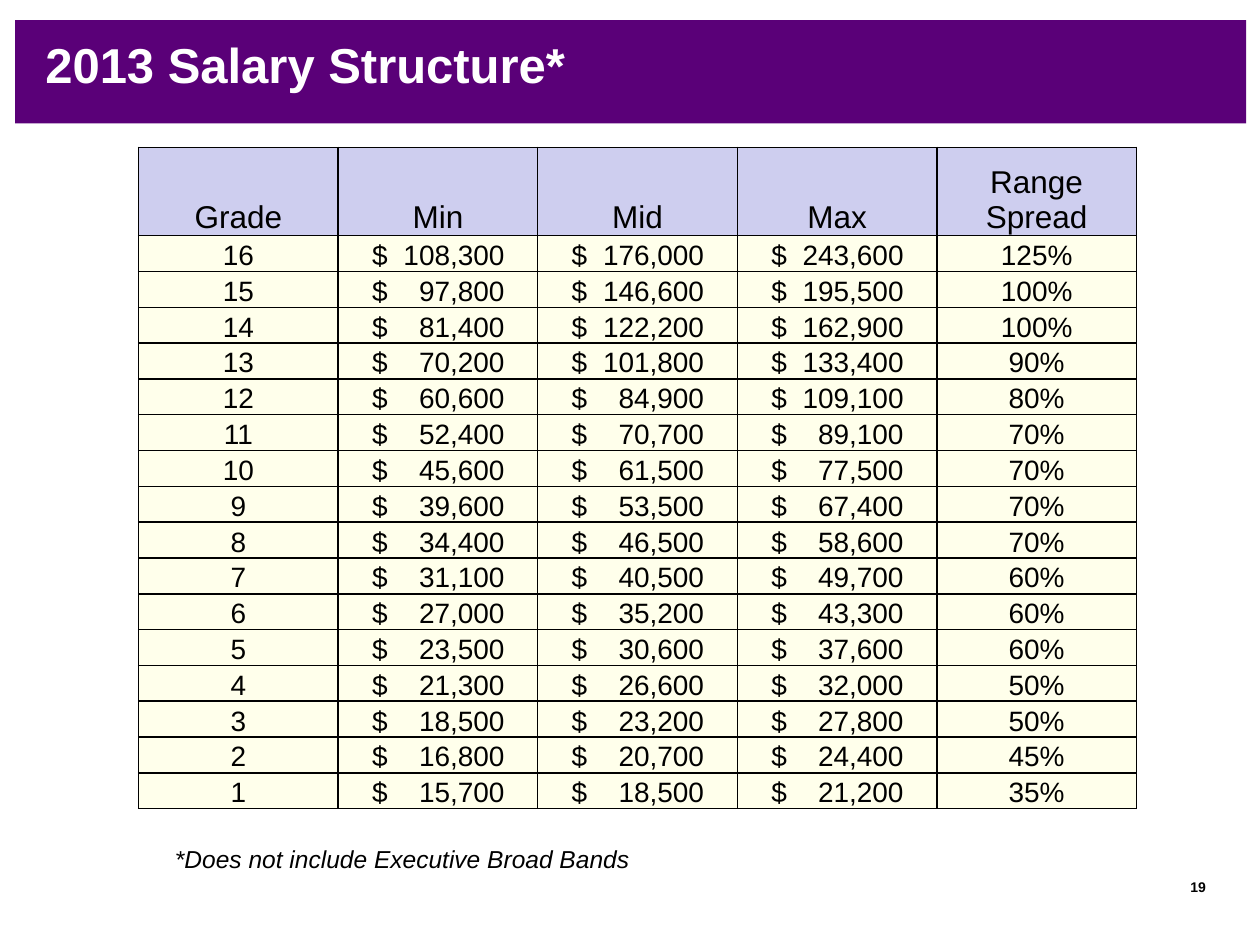
"""Build the 2013 salary structure slide with its grade table."""
from lxml.etree import SubElement
from pptx import Presentation
from pptx.dml.color import RGBColor
from pptx.enum.shapes import MSO_SHAPE
from pptx.enum.text import MSO_ANCHOR, MSO_AUTO_SIZE, PP_ALIGN
from pptx.oxml.ns import qn
from pptx.util import Inches, Pt

COLORS = {"band": "5A0078", "header": "CECEEF", "body": "FFFFEB", "ink": "000000", "white": "FFFFFF"}
HEADERS = ["Grade", "Min", "Mid", "Max", "Range Spread"]
SALARIES = [
    (16, 108300, 176000, 243600, 125),
    (15, 97800, 146600, 195500, 100),
    (14, 81400, 122200, 162900, 100),
    (13, 70200, 101800, 133400, 90),
    (12, 60600, 84900, 109100, 80),
    (11, 52400, 70700, 89100, 70),
    (10, 45600, 61500, 77500, 70),
    (9, 39600, 53500, 67400, 70),
    (8, 34400, 46500, 58600, 70),
    (7, 31100, 40500, 49700, 60),
    (6, 27000, 35200, 43300, 60),
    (5, 23500, 30600, 37600, 60),
    (4, 21300, 26600, 32000, 50),
    (3, 18500, 23200, 27800, 50),
    (2, 16800, 20700, 24400, 45),
    (1, 15700, 18500, 21200, 35),
]


def write(frame, text, size, color="ink", align=PP_ALIGN.LEFT, tab=None, **styles):
    para = frame.paragraphs[0]
    para.alignment = align
    if tab:
        tabs = SubElement(para._p.get_or_add_pPr(), qn("a:tabLst"))
        SubElement(tabs, qn("a:tab"), pos=str(tab), algn="r")
    span = para.add_run()
    span.text = text
    formats = {"name": "Arial", "size": Pt(size), "bold": False, "italic": False, **styles}
    for name, value in formats.items():
        setattr(span.font, name, value)
    span.font.color.rgb = RGBColor.from_string(COLORS[color])


def style_cell(cell, color):
    properties = cell._tc.get_or_add_tcPr()
    for side in ("lnL", "lnR", "lnT", "lnB"):
        line = SubElement(properties, qn(f"a:{side}"), w=str(Pt(1)))
        fill = SubElement(line, qn("a:solidFill"))
        SubElement(fill, qn("a:srgbClr"), val=COLORS["ink"])
    cell.fill.solid()
    cell.fill.fore_color.rgb = RGBColor.from_string(COLORS[color])
    for side in ("left", "right", "top", "bottom"):
        setattr(cell, f"margin_{side}", 0)
    cell.vertical_anchor = MSO_ANCHOR.BOTTOM


deck = Presentation()
deck.slide_width, deck.slide_height = Inches(10), Inches(7.5)
page = deck.slides.add_slide(deck.slide_layouts[5])

band = page.shapes.add_shape(MSO_SHAPE.RECTANGLE, Inches(0.12), Inches(0.16), Inches(9.77), Inches(0.82))
band.shadow.inherit = False
band.fill.solid()
band.fill.fore_color.rgb = RGBColor.from_string(COLORS["band"])
band.line.fill.background()
page.shapes.element.insert(2, band.element)

title = page.shapes.title
title.left, title.top, title.width, title.height = Inches(0.26), Inches(0.28), Inches(9.33), Inches(0.45)
title.text_frame.auto_size = MSO_AUTO_SIZE.NONE
title.text_frame.vertical_anchor = MSO_ANCHOR.MIDDLE
write(title.text_frame, "2013 Salary Structure*", 28, "white", bold=True)

number = page.shapes.add_textbox(Inches(9.02), Inches(6.92), Inches(0.55), Inches(0.3))
number.text_frame.word_wrap = True
number.text_frame.margin_right = 0
write(number.text_frame, "19", 8, align=PP_ALIGN.RIGHT, bold=True)

note = page.shapes.add_textbox(Inches(1.29), Inches(6.65), Inches(7.03), Inches(0.34))
note.text_frame.word_wrap = True
note.text_frame.auto_size = MSO_AUTO_SIZE.SHAPE_TO_FIT_TEXT
write(note.text_frame, "*Does not include Executive Broad Bands", 14, italic=True)

table = page.shapes.add_table(
    len(SALARIES) + 1, len(HEADERS), Inches(1.1), Inches(1.17), Inches(7.92), Inches(5.25)
).table
table.first_row = table.horz_banding = False
for row in table.rows:
    row.height = Inches(4.55 / len(SALARIES))
table.rows[0].height = Inches(0.7)

for column, header in enumerate(HEADERS):
    cell = table.cell(0, column)
    style_cell(cell, "header")
    write(cell.text_frame, header, 18, align=PP_ALIGN.CENTER)

for row, (grade, *amounts, spread) in enumerate(SALARIES, start=1):
    texts = [str(grade), *(f"$\t{amount:,}" for amount in amounts), f"{spread}%"]
    for column, text in enumerate(texts):
        cell = table.cell(row, column)
        style_cell(cell, "body")
        if "\t" in text:
            cell.margin_left = Inches(0.27)
            write(cell.text_frame, text, 16, tab=Inches(1.05))
        else:
            write(cell.text_frame, text, 16, align=PP_ALIGN.CENTER)

deck.save("out.pptx")
